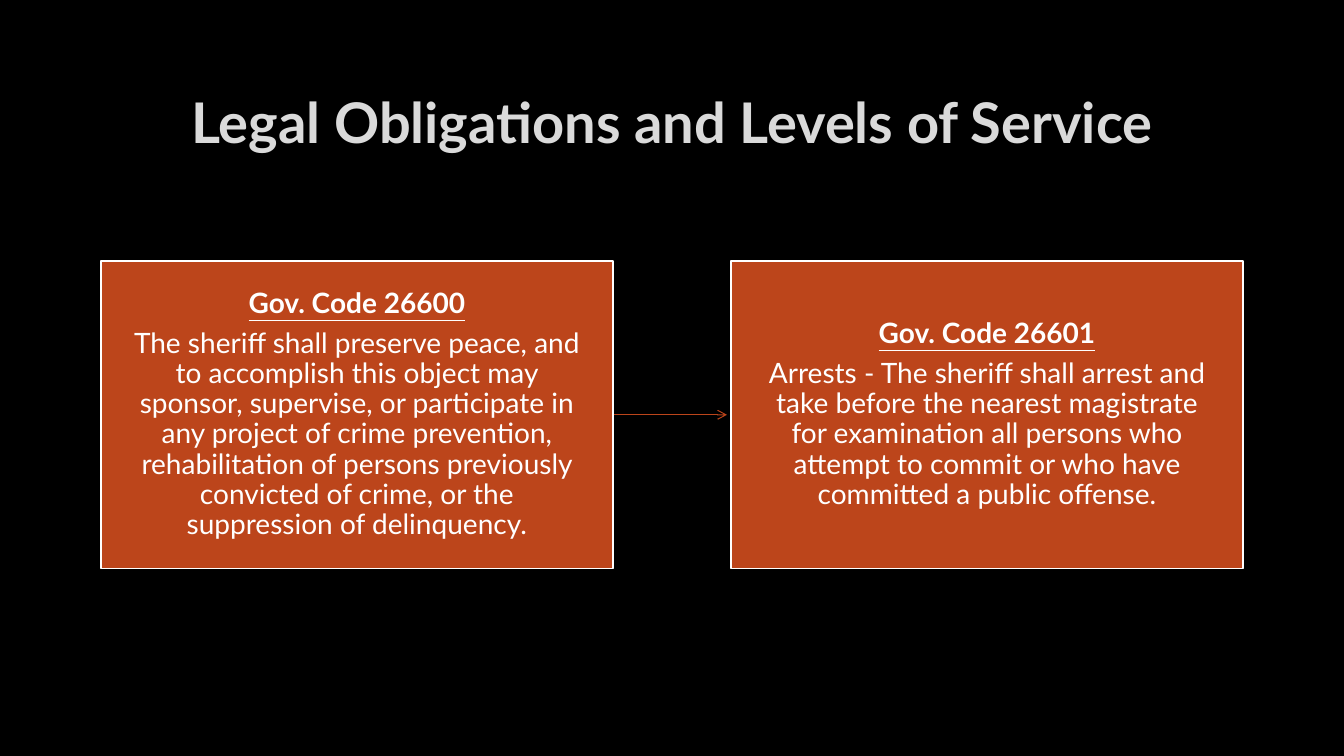
from pptx import Presentation
from pptx.dml.color import RGBColor
from pptx.enum.shapes import MSO_CONNECTOR as Connector, MSO_SHAPE as Shape
from pptx.enum.text import MSO_ANCHOR as Anchor, PP_ALIGN as Align
from pptx.oxml.ns import qn
from pptx.util import Inches, Pt
from lxml.etree import SubElement

# Content
TITLE = "Legal Obligations and Levels of Service"
CODES = [
    ("Gov. Code 26600",
     "The sheriff shall preserve peace, and to accomplish this object may sponsor, "
     "supervise, or participate in any project of crime prevention, rehabilitation of "
     "persons previously convicted of crime, or the suppression of delinquency."),
    ("Gov. Code 26601",
     "Arrests - The sheriff shall arrest and take before the nearest magistrate for "
     "examination all persons who attempt to commit or who have committed a public "
     "offense."),
]
FONT = "Lato"
BLACK, WHITE, GREY, RUST = "000000", "FFFFFF", "DADADA", "BC451B"

# Grid, in inches
WIDTH, HEIGHT = 13.33, 7.5
MARGIN = 1
BOX_TOP, BOX_WIDTH, BOX_HEIGHT = 2.59, 5.08, 3.05
BOX_STEP = WIDTH - 2 * MARGIN - BOX_WIDTH
ARROW_GAP = 0.04


def color(value):
    return RGBColor.from_string(value)


def write(para, text, size=20, fill=WHITE, bold=False, underline=False,
          line_spacing=None, space_after=None):
    para.alignment = Align.CENTER
    para.line_spacing = line_spacing
    if space_after is not None:
        para.space_after = Pt(space_after)
    span = para.add_run()
    span.text = text
    font = span.font
    font.name, font.size = FONT, Pt(size)
    font.bold, font.underline = bold, underline
    font.color.rgb = color(fill)


def add_code_box(page, left, heading, body):
    box = page.shapes.add_shape(Shape.RECTANGLE, Inches(left), Inches(BOX_TOP),
                                Inches(BOX_WIDTH), Inches(BOX_HEIGHT))
    box.shadow.inherit = False
    box.fill.solid()
    box.fill.fore_color.rgb = color(RUST)
    box.line.color.rgb = color(WHITE)
    box.line.width = Pt(1.25)
    frame = box.text_frame
    frame.word_wrap = True
    frame.vertical_anchor = Anchor.MIDDLE
    frame.margin_left = frame.margin_right = Inches(0.25)
    frame.margin_top = frame.margin_bottom = Inches(0.26)
    spacing = dict(line_spacing=0.9, space_after=7)
    write(frame.paragraphs[0], heading, bold=True, underline=True, **spacing)
    write(frame.add_paragraph(), body, **spacing)


def add_arrow(page, start, end, y):
    arrow = page.shapes.add_connector(Connector.STRAIGHT, Inches(start), Inches(y),
                                      Inches(end), Inches(y))
    arrow.line.color.rgb = color(RUST)
    arrow.line.width = Pt(0.75)
    SubElement(arrow.line._get_or_add_ln(), qn("a:tailEnd"), type="arrow")
    SubElement(arrow._element.spPr, qn("a:effectLst"))


deck = Presentation()
deck.slide_width, deck.slide_height = Inches(WIDTH), Inches(HEIGHT)
page = deck.slides.add_slide(deck.slide_layouts[5])
page.background.fill.solid()
page.background.fill.fore_color.rgb = color(BLACK)

# Title
title = page.shapes.title
title.left, title.top = Inches(MARGIN), Inches(0.67)
title.width, title.height = Inches(WIDTH - 2 * MARGIN), Inches(1.06)
title.text_frame.vertical_anchor = Anchor.MIDDLE
write(title.text_frame.paragraphs[0], TITLE, size=40, fill=GREY, bold=True)

# Arrow between the boxes, then the boxes
add_arrow(page, MARGIN + BOX_WIDTH, MARGIN + BOX_STEP - ARROW_GAP,
          BOX_TOP + BOX_HEIGHT / 2)
for column, (heading, body) in enumerate(CODES):
    add_code_box(page, MARGIN + column * BOX_STEP, heading, body)

deck.save("out.pptx")
